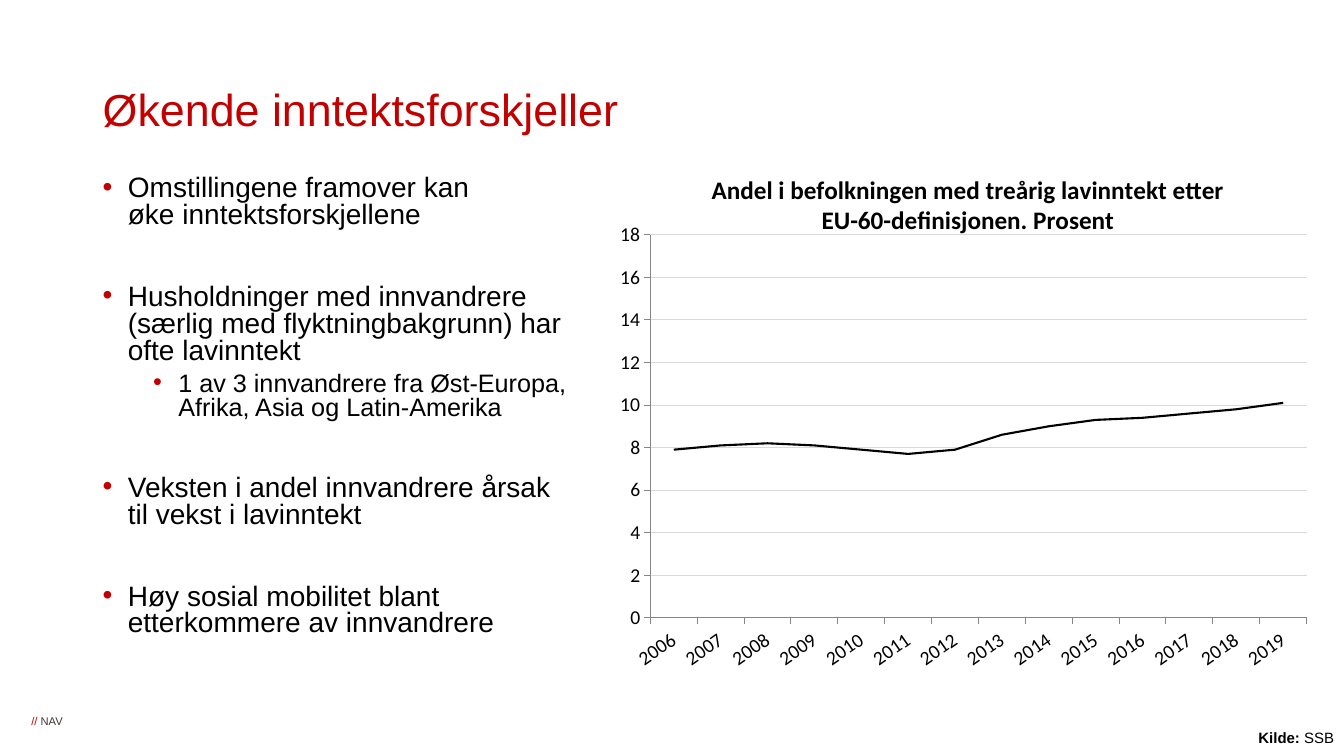
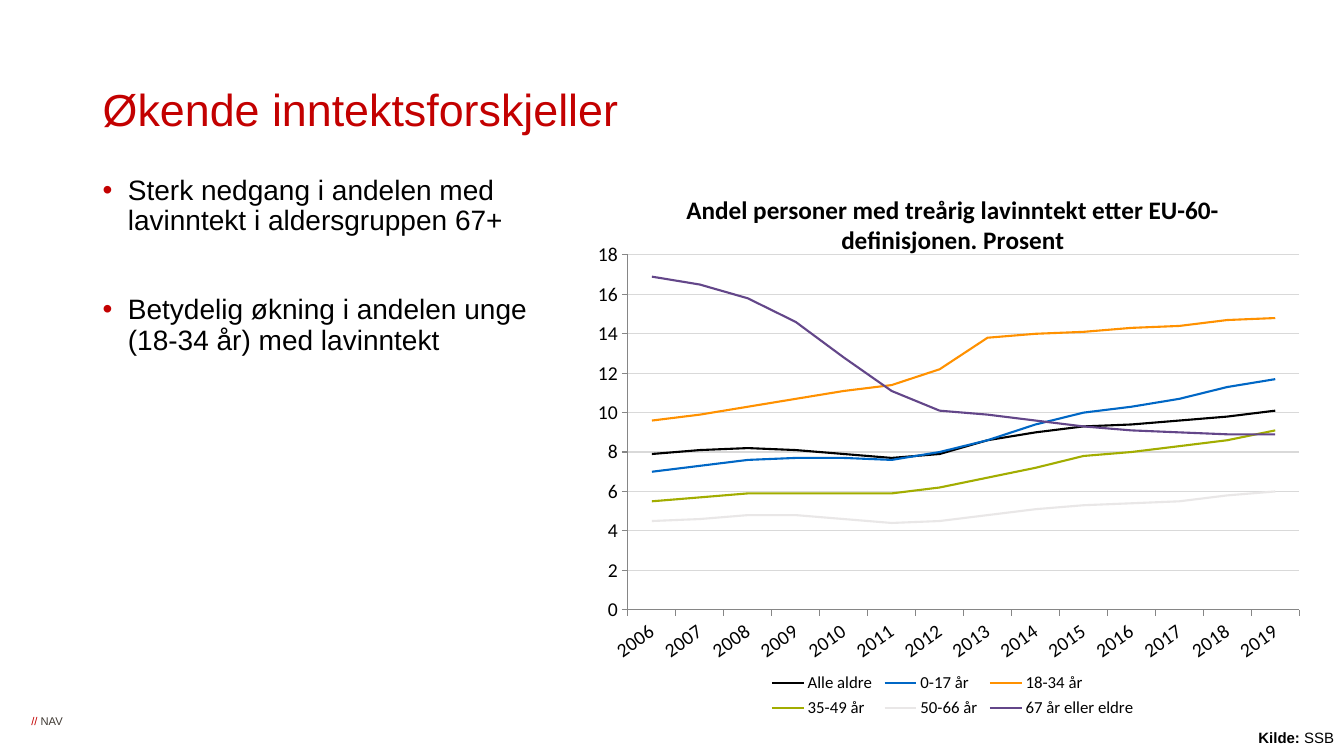
from lxml import etree
from pptx import Presentation
from pptx.chart.data import CategoryChartData
from pptx.dml.color import RGBColor
from pptx.enum.chart import XL_CHART_TYPE, XL_LEGEND_POSITION, XL_TICK_MARK
from pptx.enum.text import MSO_ANCHOR, MSO_AUTO_SIZE, PP_ALIGN
from pptx.oxml.ns import qn
from pptx.util import Inches, Pt

COLORS = {
    "red": "C30000",
    "black": "000000",
    "footer": "3E3832",
    "grid": "D9D9D9",
    "axis": "868686",
    "blue": "0067C5",
    "orange": "FF9100",
    "green": "A2AD00",
    "light": "E9E7E7",
    "purple": "634689",
}
BODY_FONT = {"name": "Arial", "size": Pt(20), "bold": False}
CHART_FONT = {"name": "Calibri", "size": Pt(14), "bold": False}
CHART_HEIGHT = 5.47
HARD_SPACE = chr(160)
TITLE = "Økende inntektsforskjeller"
YEARS = [str(year) for year in range(2006, 2020)]
ALL_AGES = ("Alle aldre", "black",
            (7.9, 8.1, 8.2, 8.1, 7.9, 7.7, 7.9, 8.6, 9, 9.3, 9.4, 9.6, 9.8, 10.1))
AGE_GROUPS = [
    ALL_AGES,
    ("0-17 år", "blue",
     (7, 7.3, 7.6, 7.7, 7.7, 7.6, 8, 8.6, 9.4, 10, 10.3, 10.7, 11.3, 11.7)),
    ("18-34 år", "orange",
     (9.6, 9.9, 10.3, 10.7, 11.1, 11.4, 12.2, 13.8, 14, 14.1, 14.3, 14.4, 14.7, 14.8)),
    ("35-49 år", "green",
     (5.5, 5.7, 5.9, 5.9, 5.9, 5.9, 6.2, 6.7, 7.2, 7.8, 8, 8.3, 8.6, 9.1)),
    ("50-66 år", "light",
     (4.5, 4.6, 4.8, 4.8, 4.6, 4.4, 4.5, 4.8, 5.1, 5.3, 5.4, 5.5, 5.8, 6)),
    ("67 år eller eldre", "purple",
     (16.9, 16.5, 15.8, 14.6, 12.8, 11.1, 10.1, 9.9, 9.6, 9.3, 9.1, 9, 8.9, 8.9)),
]


def rgb(color):
    return RGBColor.from_string(COLORS[color])


def set_font(font, base, color="black", **changes):
    for attribute, value in {**base, **changes}.items():
        setattr(font, attribute, value)
    font.color.rgb = rgb(color)


def set_line(line, color, width):
    line.color.rgb = rgb(color)
    line.width = Pt(width)


def add_run(paragraph, text, color="black", **changes):
    run = paragraph.add_run()
    run.text = text
    set_font(run.font, BODY_FONT, color, **changes)


def add_text(slide, place, **settings):
    frame = slide.shapes.add_textbox(*map(Inches, place)).text_frame
    for attribute, value in {"word_wrap": True, **settings}.items():
        setattr(frame, attribute, value)
    return frame


def add_bullet(paragraph, level):
    properties = paragraph._p.get_or_add_pPr()
    properties.set("marL", str(Inches(0.25 + 0.5 * level)))
    properties.set("indent", str(Inches(-0.25)))
    bullet_color = etree.SubElement(properties, qn("a:buClr"))
    etree.SubElement(bullet_color, qn("a:srgbClr"), val=COLORS["red"])
    etree.SubElement(properties, qn("a:buFont"), typeface="Arial")
    etree.SubElement(properties, qn("a:buChar"), char="•")


def add_points(slide, points, line_spacing, gap):
    frame = add_text(slide, (0.92, 1.7, 4.87, 4.76))
    for index, (text, level) in enumerate(points):
        point = frame.add_paragraph() if index else frame.paragraphs[0]
        add_bullet(point, level)
        point.level = level
        point.line_spacing = line_spacing
        if index:
            point.space_before = Pt(5.5 if level else gap)
        add_run(point, text, size=Pt(20 - 2 * level))


def add_frame(slide):
    title = add_text(slide, (0.92, 0.53, 11.5, 1.17), vertical_anchor=MSO_ANCHOR.MIDDLE)
    title.paragraphs[0].line_spacing = 0.9
    add_run(title.paragraphs[0], TITLE, "red", size=Pt(32))

    footer = add_text(slide, (0.27, 7.09, 0.39, 0.13), word_wrap=False,
                      margin_left=0, margin_right=0, margin_top=0, margin_bottom=0)
    footer.paragraphs[0]._p.get_or_add_pPr().set("marL", str(Inches(0.04)))
    add_run(footer.paragraphs[0], "// ", "red", size=Pt(8))
    add_run(footer.paragraphs[0], "NAV", "footer", size=Pt(8))

    source = add_text(slide, (12.29, 7.18, 1.04, 0.28),
                      auto_size=MSO_AUTO_SIZE.SHAPE_TO_FIT_TEXT)
    source.paragraphs[0].alignment = PP_ALIGN.RIGHT
    add_run(source.paragraphs[0], "Kilde:", size=Pt(10.7), bold=True)
    add_run(source.paragraphs[0], " SSB", size=Pt(10.7))


def set_layout(parent, position, box, inner=False):
    for old in parent.findall(qn("c:layout")):
        parent.remove(old)
    layout = etree.Element(qn("c:layout"))
    manual = etree.SubElement(layout, qn("c:manualLayout"))
    if inner:
        etree.SubElement(manual, qn("c:layoutTarget"), val="inner")
    for tag in ("xMode", "yMode"):
        etree.SubElement(manual, qn(f"c:{tag}"), val="edge")
    for tag, value in zip("xywh", box):
        etree.SubElement(manual, qn(f"c:{tag}"), val=str(value))
    parent.insert(position, layout)


def style_axes(chart):
    for axis in (chart.category_axis, chart.value_axis):
        axis.major_tick_mark = XL_TICK_MARK.OUTSIDE
        axis.minor_tick_mark = XL_TICK_MARK.NONE
        set_font(axis.tick_labels.font, CHART_FONT)
        set_line(axis.format.line, "axis", 0.75)
    year_labels = chart.category_axis._element.find(qn("c:txPr"))
    year_labels.find(qn("a:bodyPr")).set("rot", str(-35 * 60000))
    values = chart.value_axis
    for attribute, value in {"minimum_scale": 0, "maximum_scale": 18,
                             "major_unit": 2, "has_major_gridlines": True}.items():
        setattr(values, attribute, value)
    set_line(values.major_gridlines.format.line, "grid", 0.75)


def add_legend(chart):
    chart.has_legend = True
    chart.legend.position = XL_LEGEND_POSITION.BOTTOM
    chart.legend.include_in_layout = False
    set_font(chart.legend.font, CHART_FONT, size=Pt(12))
    set_layout(chart.legend._element, 1, (0.24, 0.9, 0.52, 0.1))


def add_line_chart(slide, left, top, width, heading, groups, plot_height):
    data = CategoryChartData()
    data.categories = YEARS
    for name, _, shares in groups:
        data.add_series(name, shares)
    place = map(Inches, (left, top, width, CHART_HEIGHT))
    chart = slide.shapes.add_chart(XL_CHART_TYPE.LINE, *place, data).chart
    set_font(chart.font, CHART_FONT, size=Pt(10))

    chart.has_title = True
    chart.chart_title.include_in_layout = False
    heading_run = chart.chart_title.text_frame.paragraphs[0].add_run()
    heading_run.text = heading
    set_font(heading_run.font, CHART_FONT, size=Pt(18), bold=True)

    style_axes(chart)
    chart.plots[0].vary_by_categories = False
    for series, (_, color, _) in zip(chart.plots[0].series, groups):
        series.smooth = False
        set_line(series.format.line, color, 1.5)
    plot_box = (0.05, 0.83 / CHART_HEIGHT, 0.93, plot_height / CHART_HEIGHT)
    set_layout(chart._chartSpace.chart.plotArea, 0, plot_box, inner=True)
    chart.has_legend = False
    if len(groups) > 1:
        add_legend(chart)


def main():
    deck = Presentation()
    deck.slide_width, deck.slide_height = Inches(13.33), Inches(7.5)
    population, ages = (deck.slides.add_slide(deck.slide_layouts[6]) for _ in range(2))

    add_frame(population)
    add_points(population, [
        (f"Omstillingene framover kan øke{HARD_SPACE}inntektsforskjellene", 0),
        ("Husholdninger med innvandrere (særlig med flyktningbakgrunn) "
         "har ofte lavinntekt", 0),
        ("1 av 3 innvandrere fra Øst-Europa, Afrika, Asia og Latin-Amerika", 1),
        ("Veksten i andel innvandrere årsak til vekst i lavinntekt", 0),
        ("Høy sosial mobilitet blant etterkommere av innvandrere", 0),
    ], line_spacing=0.8, gap=39)
    add_line_chart(
        population, 6.1, 1.5, 7,
        "Andel i befolkningen med treårig lavinntekt etter EU-60-definisjonen. Prosent",
        [ALL_AGES], plot_height=3.8)

    add_frame(ages)
    add_points(ages, [
        ("Sterk nedgang i andelen med lavinntekt i aldersgruppen 67+", 0),
        ("Betydelig økning i andelen unge (18-34 år) med lavinntekt", 0),
    ], line_spacing=0.9, gap=42)
    add_line_chart(
        ages, 5.87, 1.7, 7.16,
        "Andel personer med treårig lavinntekt etter EU-60-definisjonen. Prosent",
        AGE_GROUPS, plot_height=3.52)

    deck.save("out.pptx")


if __name__ == "__main__":
    main()
